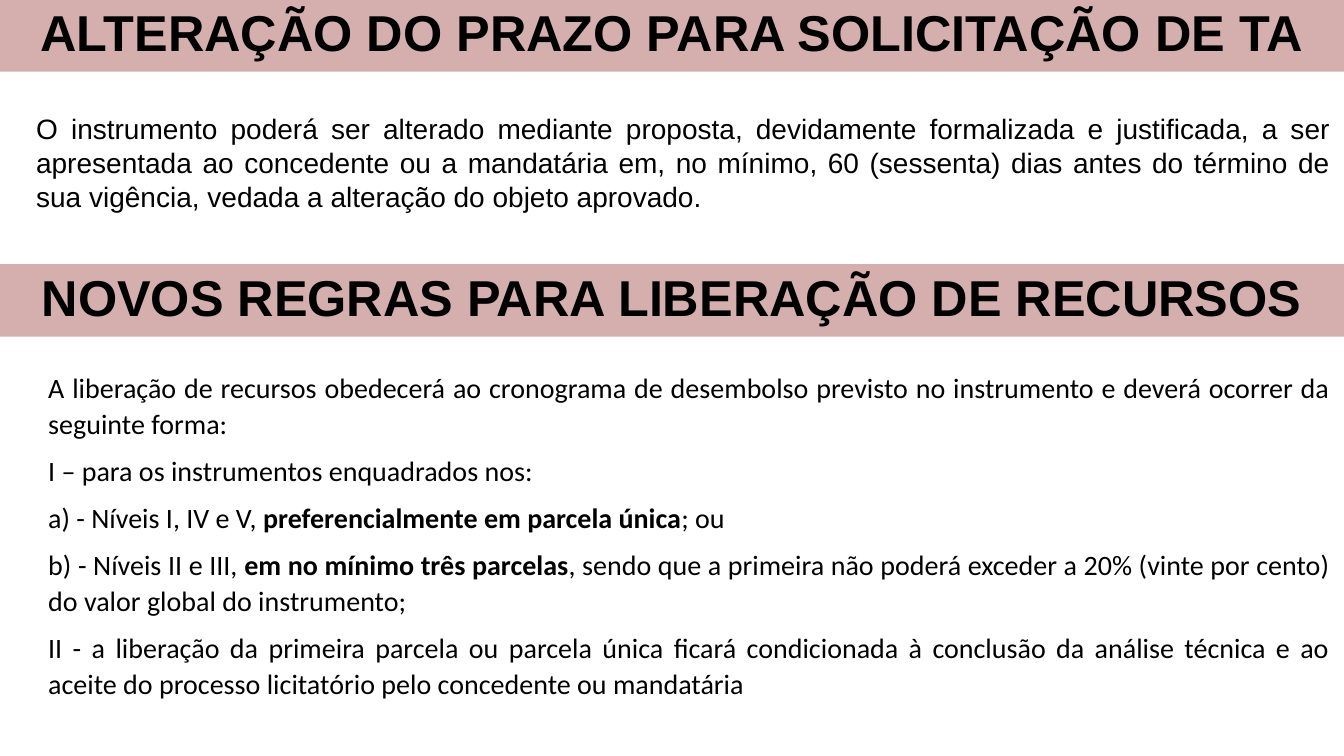
import pptx
import pptx.util
import pptx.dml.color
import pptx.enum.shapes
import pptx.enum.text
import pptx.oxml
import pptx.oxml.ns

Inch = pptx.util.Inches
Align = pptx.enum.text.PP_ALIGN
WIDE, HIGH = 13.33, 7.5
BAND = 0.72

TERM = [[("O instrumento poderá ser alterado mediante proposta, devidamente formalizada e justificada, "
          "a ser apresentada ao concedente ou a mandatária em, no mínimo, 60 (sessenta) dias antes do "
          "término de sua vigência, vedada a alteração do objeto aprovado.", False)]]
RULES = [
    [("A liberação de recursos obedecerá ao cronograma de desembolso previsto no instrumento e "
      "deverá ocorrer da seguinte forma:", False)],
    [("I – para os instrumentos enquadrados nos: ", False)],
    [("a) - Níveis I, IV e V, ", False), ("preferencialmente em parcela única", True), ("; ou", False)],
    [("b) - Níveis II e III, ", False), ("em no mínimo três parcelas", True),
     (", sendo que a primeira não poderá exceder a 20% (vinte por cento) do valor global do "
      "instrumento; ", False)],
    [("II - a liberação da primeira parcela ou parcela única ficará condicionada à conclusão da "
      "análise técnica e ao aceite do processo licitatório pelo concedente ou mandatária", False)],
]


def tint(code):
    return pptx.dml.color.RGBColor.from_string(code)


def write(para, text, size, face, bold=False):
    run = para.add_run()
    run.text = text
    run.font.size = pptx.util.Pt(size)
    run.font.name = face
    run.font.bold = bold
    run.font.color.rgb = tint("000000")


def banner(slide, box, title):
    band = slide.shapes.add_shape(pptx.enum.shapes.MSO_SHAPE.RECTANGLE, *map(Inch, box))
    band.shadow.inherit = False
    band.line.fill.background()
    band.fill.solid()
    band.fill.fore_color.rgb = tint("953735")
    color = band.fill._xPr.find(".//" + pptx.oxml.ns.qn("a:srgbClr"))
    alpha = color.makeelement(pptx.oxml.ns.qn("a:alpha"), {"val": "40000"})
    color.append(alpha)
    frame = band.text_frame
    frame.word_wrap = True
    frame.vertical_anchor = pptx.enum.text.MSO_ANCHOR.MIDDLE
    para = frame.paragraphs[0]
    para.alignment = Align.CENTER
    para.line_spacing = 0.9
    write(para, title, 36, "Arial", True)


def body(slide, box, paras, face, indent=0, lead=1.0, after=0):
    frame = slide.shapes.add_textbox(*map(Inch, box)).text_frame
    frame.word_wrap = True
    frame.auto_size = pptx.enum.text.MSO_AUTO_SIZE.SHAPE_TO_FIT_TEXT
    for i, runs in enumerate(paras):
        para = frame.add_paragraph() if i else frame.paragraphs[0]
        para.alignment = Align.JUSTIFY
        para.line_spacing = lead
        para.space_after = pptx.util.Pt(after)
        props = para._p.get_or_add_pPr()
        props.set("marL", str(Inch(indent)))
        props.set("indent", "0")
        for text, bold in runs:
            write(para, text, 20, face, bold)


def main():
    deck = pptx.Presentation()
    deck.slide_width, deck.slide_height = Inch(WIDE), Inch(HIGH)
    slide = deck.slides.add_slide(deck.slide_layouts[6])
    banner(slide, (0, -0.01, WIDE, BAND), "ALTERAÇÃO DO PRAZO PARA SOLICITAÇÃO DE TA")
    banner(slide, (0, 2.62, WIDE, BAND), "NOVOS REGRAS PARA LIBERAÇÃO DE RECURSOS")
    body(slide, (0.26, 1.06, 13.04, 1.11), TERM, "Arial")
    body(slide, (-0.04, 3.6, WIDE, 3.41), RULES, "Calibri", 0.42, 1.07, 8)
    deck.save("out.pptx")


if __name__ == "__main__":
    main()
